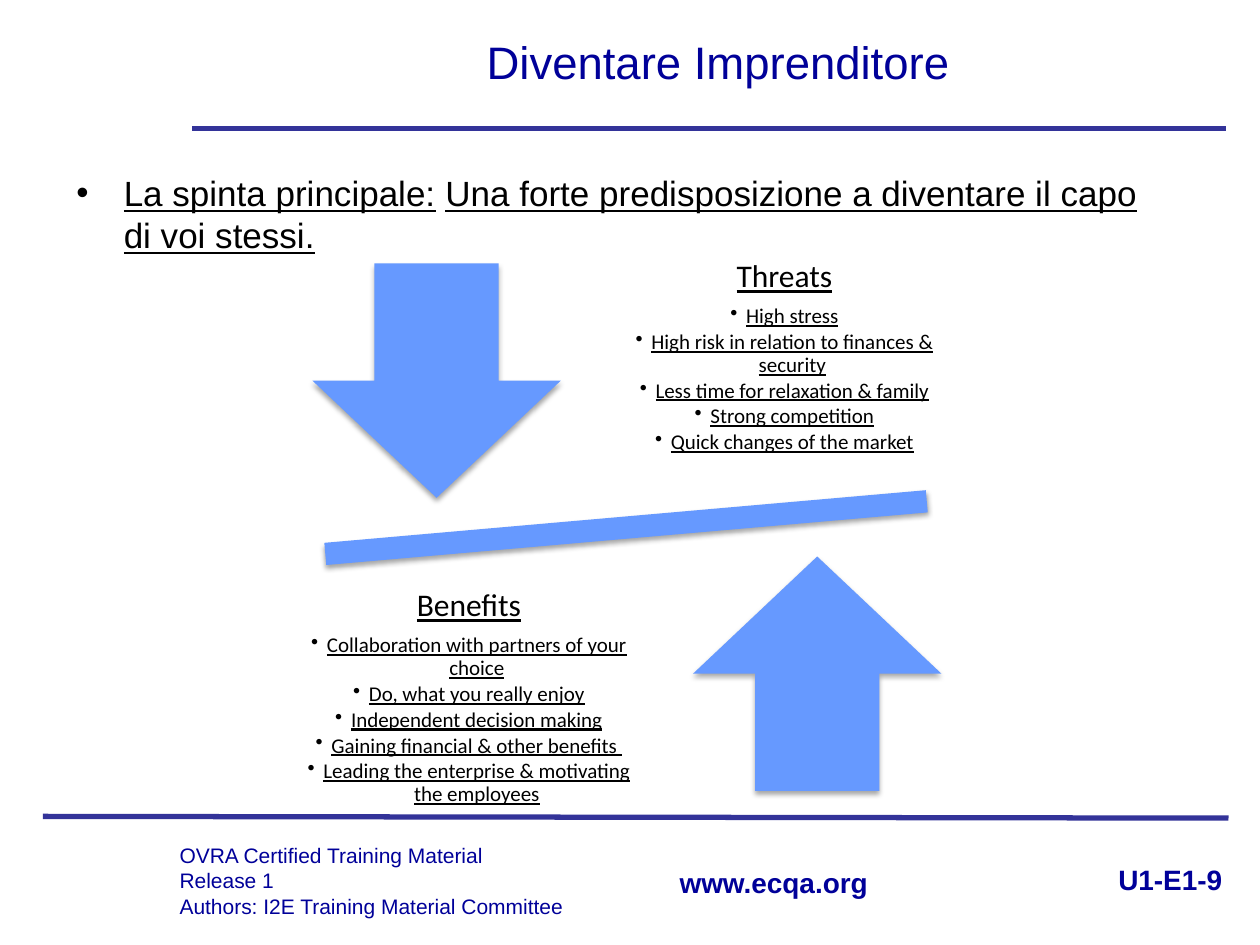
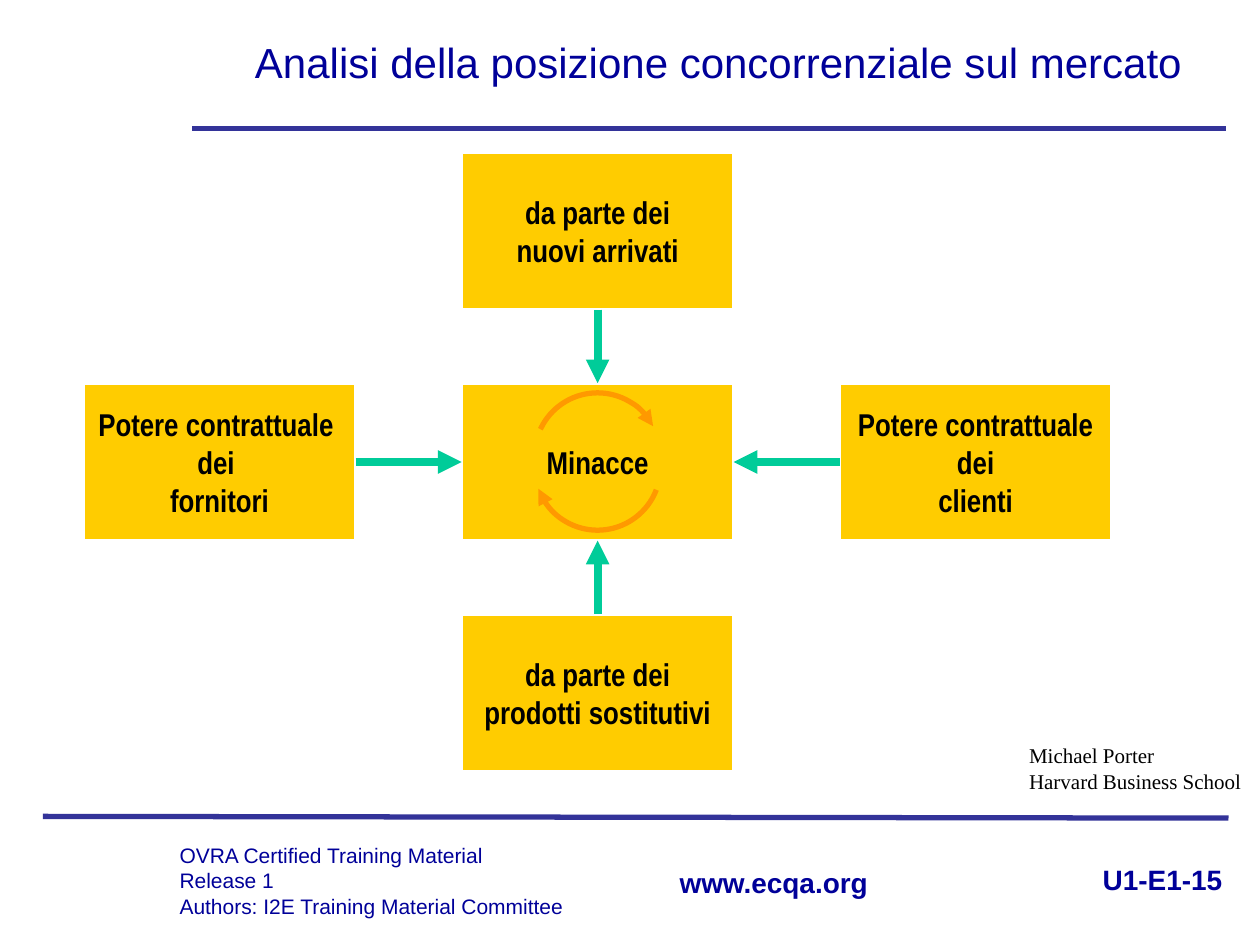
from lxml import etree
from pptx import Presentation
from pptx import util as u
from pptx.dml.color import RGBColor
from pptx.enum import shapes, text
from pptx.oxml.ns import qn

Pt = u.Pt
NAVY, RULE, BLACK, WHITE = "000099", "333399", "000000", "FFFFFF"
BLUE, YELLOW, GREEN, ORANGE = "6699FF", "FFCC00", "00CC99", "FF9900"
CENTER = text.PP_ALIGN.CENTER
MIDDLE = text.MSO_ANCHOR.MIDDLE


def paint(fill, color):
    fill.solid()
    fill.fore_color.rgb = RGBColor.from_string(color)


def write(paragraph, words, size, color=BLACK, font="Arial", bold=False, underline=False):
    for number, line in enumerate(words.split("\n")):
        if number:
            paragraph.add_line_break()
        run = paragraph.add_run()
        run.text = line
        run.font.size = Pt(size)
        run.font.name = font
        run.font.bold = bold
        run.font.underline = underline
        paint(run.font.fill, color)


presentation = Presentation()
presentation.slide_width = Pt(720)
presentation.slide_height = Pt(540)

slides = []
for layout, title, title_size, page in [
    (1, "Diventare Imprenditore", 26, "U1-E1-9"),
    (5, "Analisi della posizione concorrenziale sul mercato", 24, "U1-E1-15"),
]:
    slide = presentation.slides.add_slide(presentation.slide_layouts[layout])
    slides.append(slide)

    heading = slide.shapes.title
    heading.left, heading.top, heading.width, heading.height = Pt(126), 0, Pt(569), Pt(70.5)
    heading.text_frame.auto_size = text.MSO_AUTO_SIZE.NONE
    heading.text_frame.vertical_anchor = MIDDLE
    heading.text_frame.paragraphs[0].alignment = CENTER
    write(heading.text_frame.paragraphs[0], title, title_size, NAVY)

    for left, top, right, bottom in [(110, 73.5, 700.5, 73.5), (24.5, 466.5, 702, 467.5)]:
        rule = slide.shapes.add_connector(
            shapes.MSO_CONNECTOR.STRAIGHT, Pt(left), Pt(top), Pt(right), Pt(bottom))
        paint(rule.line.fill, RULE)
        rule.line.width = Pt(3)

    credits = ["OVRA Certified Training Material\nRelease 1",
               "Authors: I2E Training Material Committee"]
    for left, top, width, height, lines, size, bold, alignment in [
        (584.5, 489.5, 121, 26.5, [page], 16, True, text.PP_ALIGN.RIGHT),
        (95.5, 478, 258.5, 51, credits, 12, False, text.PP_ALIGN.LEFT),
        (376.5, 491, 126.5, 26.5, ["www.ecqa.org"], 16, True, text.PP_ALIGN.RIGHT),
    ]:
        footer = slide.shapes.add_textbox(Pt(left), Pt(top), Pt(width), Pt(height))
        frame = footer.text_frame
        frame.word_wrap = True
        for number, line in enumerate(lines):
            paragraph = frame.add_paragraph() if number else frame.paragraphs[0]
            paragraph.alignment = alignment
            write(paragraph, line, size, NAVY, bold=bold)

balance_slide, market_slide = slides

body = balance_slide.placeholders[1]
body.left, body.top, body.width, body.height = Pt(36.5), Pt(94.5), Pt(641), Pt(73.5)
body.text_frame.auto_size = text.MSO_AUTO_SIZE.NONE
drive = body.text_frame.paragraphs[0]
drive.space_before = Pt(0)
write(drive, "La spinta principale:", 20, underline=True)
write(drive, " ", 20)
write(drive, "Una forte predisposizione a diventare il capo di voi stessi.", 20, underline=True)

for preset, left, top, width, height, rotation in [
    (shapes.MSO_SHAPE.MATH_MINUS, 123, 274.5, 469.5, 54, 355),
    (shapes.MSO_SHAPE.DOWN_ARROW, 178.5, 150.5, 142, 134, 0),
    (shapes.MSO_SHAPE.UP_ARROW, 396, 318, 142, 134, 0),
]:
    shape = balance_slide.shapes.add_shape(preset, Pt(left), Pt(top), Pt(width), Pt(height))
    shape.rotation = rotation
    paint(shape.fill, BLUE)
    shape.line.fill.background()
    shape.shadow.inherit = False
    effects = shape.element.spPr.find(qn("a:effectLst"))
    shadow = etree.SubElement(effects, qn("a:outerShdw"), blurRad=str(Pt(3.1)),
                              dist=str(Pt(1.8)), dir="5400000", rotWithShape="0")
    shade = etree.SubElement(shadow, qn("a:srgbClr"), val=BLACK)
    etree.SubElement(shade, qn("a:alpha"), val="35000")

for left, top, width, heading, points in [
    (343.5, 134, 209.5, "Threats", [
        "High stress",
        "High risk in relation to finances & security",
        "Less time for relaxation & family",
        "Strong competition",
        "Quick changes of the market"]),
    (160, 328.5, 216, "Benefits", [
        "Collaboration with partners of your choice",
        "Do, what you really enjoy",
        "Independent decision making",
        "Gaining financial & other benefits ",
        "Leading the enterprise & motivating the employees"]),
]:
    box = balance_slide.shapes.add_textbox(Pt(left), Pt(top), Pt(width), Pt(140.5))
    frame = box.text_frame
    frame.word_wrap = True
    frame.vertical_anchor = MIDDLE
    frame.margin_left = frame.margin_right = frame.margin_top = frame.margin_bottom = Pt(10)
    for number, line in enumerate([heading] + points):
        paragraph = frame.add_paragraph() if number else frame.paragraphs[0]
        paragraph.alignment = CENTER
        paragraph.line_spacing = 0.9
        paragraph.space_after = Pt(1.8 if number else 6.3)
        if number:
            properties = paragraph._p.get_or_add_pPr()
            properties.set("marL", str(Pt(9)))
            properties.set("indent", str(Pt(-9)))
            etree.SubElement(properties, qn("a:buChar"), char="•")
        write(paragraph, line, 12 if number else 18, font="Calibri", underline=True)

CENTER_X, CENTER_Y = 341.5, 264
BOX_WIDTH, BOX_HEIGHT = 155.5, 90
STEP_X, STEP_Y = 216, 132

forces = {}
for name, column, row, lines in [
    ("suppliers", -1, 0, ["Potere contrattuale ", "dei ", "fornitori"]),
    ("customers", 1, 0, ["Potere contrattuale", "dei", "clienti"]),
    ("threats", 0, 0, ["Minacce"]),
    ("entrants", 0, -1, ["da parte dei", "nuovi arrivati"]),
    ("substitutes", 0, 1, ["da parte dei", "prodotti sostitutivi"]),
]:
    box = market_slide.shapes.add_shape(
        shapes.MSO_SHAPE.RECTANGLE,
        Pt(CENTER_X + column * STEP_X - BOX_WIDTH / 2),
        Pt(CENTER_Y + row * STEP_Y - BOX_HEIGHT / 2),
        Pt(BOX_WIDTH), Pt(BOX_HEIGHT))
    forces[name] = box
    box.shadow.inherit = False
    paint(box.fill, YELLOW)
    paint(box.line.fill, WHITE)
    box.line.width = Pt(2.25)
    frame = box.text_frame
    frame.word_wrap = True
    frame.vertical_anchor = MIDDLE
    for number, line in enumerate(lines):
        paragraph = frame.add_paragraph() if number else frame.paragraphs[0]
        paragraph.alignment = CENTER
        write(paragraph, line, 18, font="Arial Narrow", bold=True)

pointers = []
for name, outer_side, inner_side in [
    ("suppliers", 3, 1), ("entrants", 2, 0), ("customers", 1, 3), ("substitutes", 0, 2),
]:
    arrow = market_slide.shapes.add_connector(shapes.MSO_CONNECTOR.STRAIGHT, 0, 0, 0, 0)
    arrow.begin_connect(forces[name], outer_side)
    arrow.end_connect(forces["threats"], inner_side)
    paint(arrow.line.fill, GREEN)
    arrow.line.width = Pt(4.5)
    pointers.append(arrow)

for top, start, end in [(224.5, 205, 332), (231, 21, 160)]:
    arc = market_slide.shapes.add_shape(
        shapes.MSO_SHAPE.ARC, Pt(CENTER_X - 36), Pt(top), Pt(72), Pt(72))
    arc.adjustments[0] = start * 0.6
    arc.adjustments[1] = end * 0.6
    arc.fill.background()
    paint(arc.line.fill, ORANGE)
    arc.line.width = Pt(3)
    arc.shadow.inherit = False
    pointers.append(arc)

for pointer in pointers:
    etree.SubElement(pointer.element.spPr.find(qn("a:ln")), qn("a:tailEnd"), type="triangle")

source = market_slide.shapes.add_textbox(Pt(581), Pt(421), Pt(136), Pt(36))
frame = source.text_frame
frame.word_wrap = False
write(frame.paragraphs[0], "Michael Porter", 12, font="Times New Roman")
write(frame.add_paragraph(), "Harvard Business School", 12, font="Times New Roman")

for slide in slides:
    for shape in slide.shapes:
        if shape.shape_type == shapes.MSO_SHAPE_TYPE.LINE:
            etree.SubElement(shape.element.spPr, qn("a:effectLst"))

presentation.save("out.pptx")
